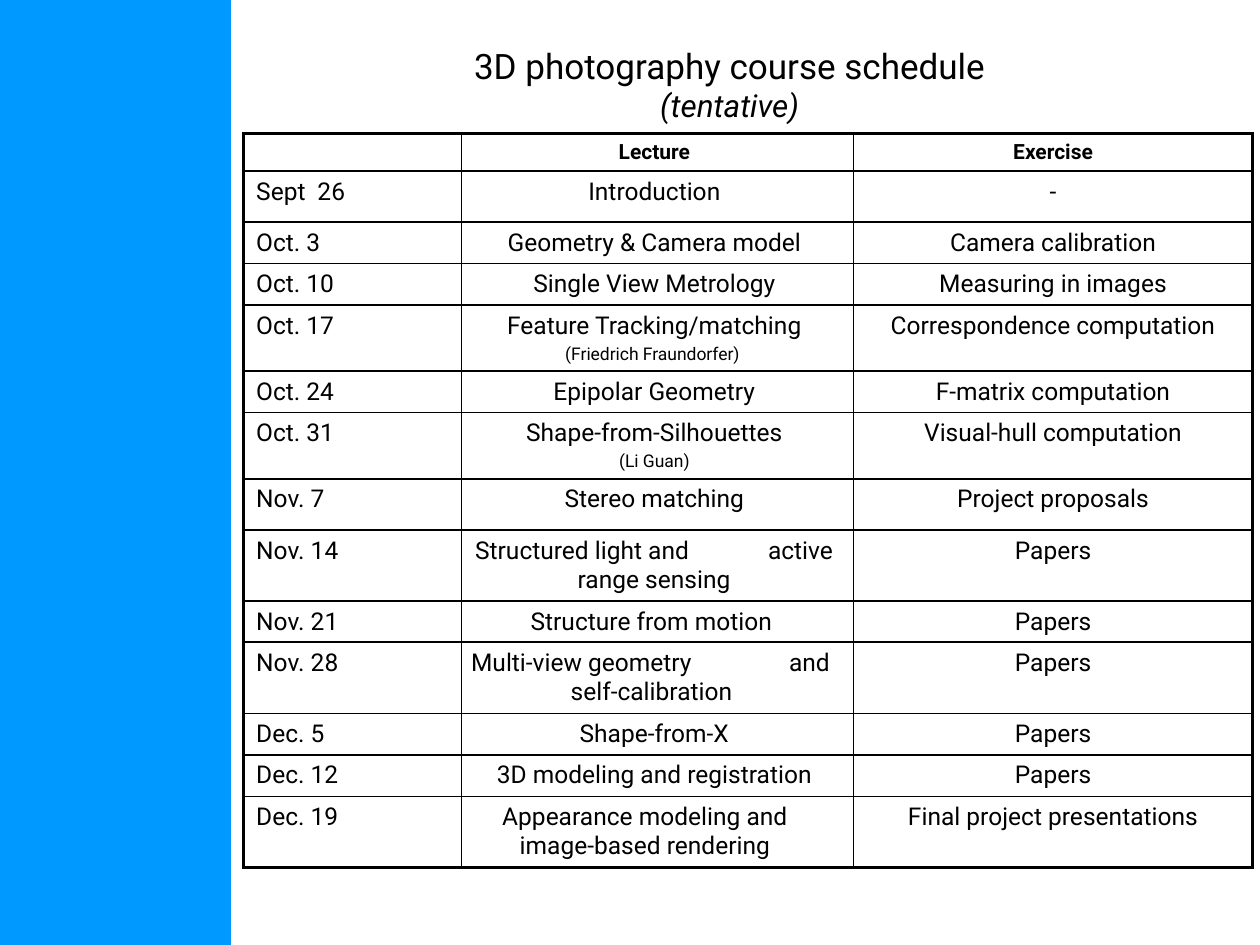
from lxml.etree import SubElement
from pptx import Presentation
from pptx.dml.color import RGBColor
from pptx.enum.shapes import MSO_SHAPE
from pptx.enum.text import MSO_ANCHOR, PP_ALIGN
from pptx.oxml import parse_xml
from pptx.oxml.ns import nsdecls, qn
from pptx.util import Pt

FONT, BLACK, BLUE = "Roboto", "000000", "0099FF"
OUTER, MIDDLE, INNER = 2.25, 1.5, 1

HEADER = ("", "Lecture", "Exercise")
# Date, lecture lines, exercise
SCHEDULE = [
    ("Sept\t26", ["Introduction"], "-"),
    ("Oct. 3", ["Geometry & Camera model"], "Camera calibration"),
    ("Oct. 10", ["Single View Metrology"], "Measuring in images"),
    ("Oct. 17", ["Feature Tracking/matching", "(Friedrich Fraundorfer)"],
     "Correspondence computation"),
    ("Oct. 24", ["Epipolar Geometry"], "F-matrix computation"),
    ("Oct. 31", ["Shape-from-Silhouettes", "(Li Guan)"], "Visual-hull computation"),
    ("Nov. 7", ["Stereo matching"], "Project proposals"),
    ("Nov. 14", ["Structured light and\tactive", "range sensing"], "Papers"),
    ("Nov. 21", ["Structure from motion"], "Papers"),
    ("Nov. 28", ["Multi-view geometry\tand", "self-calibration"], "Papers"),
    ("Dec. 5", ["Shape-from-X"], "Papers"),
    ("Dec. 12", ["3D modeling and registration"], "Papers"),
    ("Dec. 19", ["Appearance modeling and", "image-based rendering"],
     "Final project presentations"),
]
# Left and right insets of the lecture cells, by date
LECTURE_INSETS = {"Nov. 14": (7.7, 11.6), "Nov. 28": (5.4, 12.3)}
DEFAULT_INSETS = (3.6, 7.2)
# Tab stops and right indents, by line
TAB_STOPS = {"Sept\t26": 35, "Structured light and\tactive": 167.4,
             "Multi-view geometry\tand": 181.7}
RIGHT_INDENTS = {"(Friedrich Fraundorfer)": 2.3, "Structure from motion": 3.4,
                 "Appearance modeling and": 10.8}
TALL_ROWS = {"Sept\t26", "Nov. 7"}
SECOND_HALF = "Nov. 28"  # a heavier rule runs above this row
COLUMNS = (124.6, 223.9, 228.2)


def color(value):
    return RGBColor.from_string(value)


def add_text(paragraph, text, size, bold=False, italic=False):
    run = paragraph.add_run()
    run.text = text
    font = run.font
    font.name, font.size, font.bold, font.italic = FONT, Pt(size), bold, italic
    font.color.rgb = color(BLACK)


def set_borders(cell, widths):
    """Draw the left, right, top and bottom borders of a cell."""
    properties = cell._tc.get_or_add_tcPr()
    for index, (side, width) in enumerate(zip("LRTB", widths)):
        properties.insert(index, parse_xml(
            f'<a:ln{side} {nsdecls("a")} w="{Pt(width)}"><a:solidFill>'
            f'<a:srgbClr val="{BLACK}"/></a:solidFill></a:ln{side}>'))


def add_tab_stop(paragraph, position):
    tabs = SubElement(paragraph._p.get_or_add_pPr(), qn("a:tabLst"))
    SubElement(tabs, qn("a:tab"), pos=str(Pt(position)), algn="l")


def is_tutor(line):
    return line.startswith("(")


def row_height(date, lines):
    if len(lines) > 1:
        return 37.5 if is_tutor(lines[1]) else 40.4
    return 29.2 if date in TALL_ROWS else 23.7


def fill_cell(cell, lines, size, align, bold=False):
    for index, line in enumerate(lines):
        frame = cell.text_frame
        paragraph = frame.add_paragraph() if index else frame.paragraphs[0]
        paragraph.alignment = align
        if line in TAB_STOPS:
            paragraph.alignment = PP_ALIGN.LEFT
            add_tab_stop(paragraph, TAB_STOPS[line])
        if line in RIGHT_INDENTS:
            paragraph._p.get_or_add_pPr().set("marR", str(Pt(RIGHT_INDENTS[line])))
        if is_tutor(line):
            paragraph.space_before = Pt(2)
        if line:
            add_text(paragraph, line, 10 if is_tutor(line) else size, bold)
        else:  # keeps an empty cell from stretching its row
            SubElement(paragraph._p, qn("a:endParaRPr"), sz=str(size * 100))


presentation = Presentation()
presentation.slide_width, presentation.slide_height = Pt(720), Pt(540)
slide = presentation.slides.add_slide(presentation.slide_layouts[6])

# Side band
band = slide.shapes.add_shape(MSO_SHAPE.RECTANGLE, 0, 0, Pt(132), Pt(540))
band.shadow.inherit = False
band.fill.solid()
band.fill.fore_color.rgb = color(BLUE)
band.line.fill.background()

# Title
title = slide.shapes.add_textbox(Pt(132), Pt(36), Pt(570), Pt(24))
title.text_frame.word_wrap = True
title.text_frame.vertical_anchor = MSO_ANCHOR.MIDDLE
heading = title.text_frame.paragraphs[0]
heading.alignment = PP_ALIGN.CENTER
add_text(heading, "3D photography course schedule", 20)
heading.add_line_break()
add_text(heading, "(tentative)", 18, italic=True)

# Schedule table
heights = [21.2] + [row_height(date, lines) for date, lines, _ in SCHEDULE]
table = slide.shapes.add_table(
    len(heights), len(COLUMNS), Pt(139.2), Pt(76.4),
    Pt(sum(COLUMNS)), Pt(sum(heights))).table
table.first_row = table.horz_banding = False
for column, width in zip(table.columns, COLUMNS):
    column.width = Pt(width)
for row, height in zip(table.rows, heights):
    row.height = Pt(height)

# Horizontal and vertical rule widths
rules = [OUTER] + [INNER] * len(SCHEDULE) + [OUTER]
rules[1 + [entry[0] for entry in SCHEDULE].index(SECOND_HALF)] = MIDDLE
uprights = [OUTER, INNER, INNER, OUTER]

rows = [[[text] for text in HEADER]]
rows += [[[date], lines, [exercise]] for date, lines, exercise in SCHEDULE]
for r, entry in enumerate(rows):
    date = entry[0][0]
    for c, lines in enumerate(entry):
        cell = table.cell(r, c)
        cell.fill.background()
        cell.margin_bottom = Pt(3.3)
        if c == 1:
            left, right = LECTURE_INSETS.get(date, DEFAULT_INSETS)
            cell.margin_left, cell.margin_right = Pt(left), Pt(right)
        align = PP_ALIGN.CENTER if c else PP_ALIGN.LEFT
        fill_cell(cell, lines, 14 if r else 12, align, bold=r == 0)
        set_borders(cell, (uprights[c], uprights[c + 1], rules[r], rules[r + 1]))

presentation.save("out.pptx")
